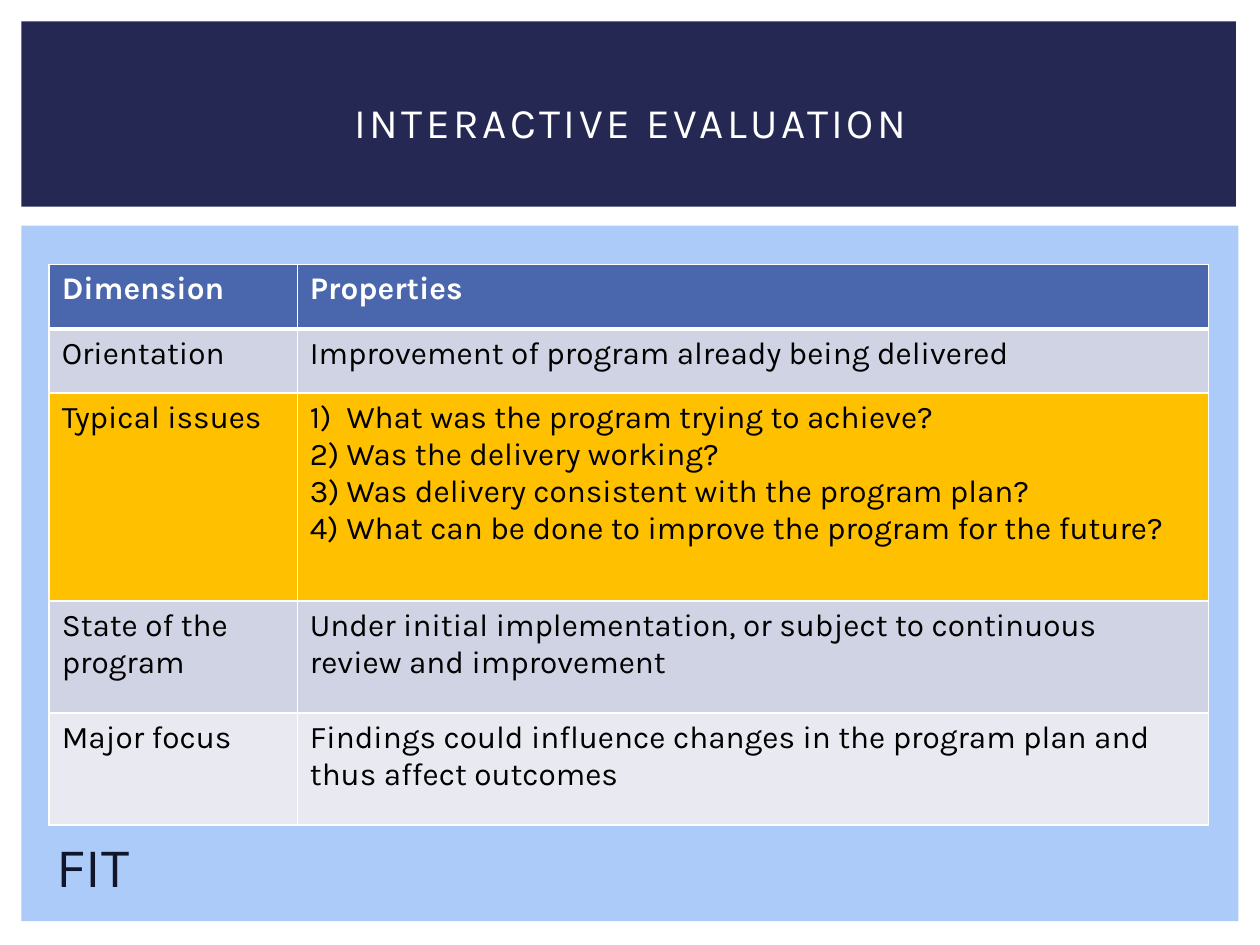
from lxml import etree
from pptx import Presentation
from pptx.dml.color import RGBColor
from pptx.enum import shapes, text
from pptx.oxml import ns
from pptx.util import Inches, Pt


def rgb(value):
    return RGBColor.from_string(value)


def write(frame, lines, color, size=18, bold=False):
    """Fill a text frame with one paragraph per line."""
    frame.word_wrap = True
    frame.text = "\n".join(lines)
    style = {"name": "Karla", "size": Pt(size), "bold": bold}
    for paragraph in frame.paragraphs:
        font = paragraph.runs[0].font
        for key, value in style.items():
            setattr(font, key, value)
        font.color.rgb = rgb(color)


deck = Presentation()
deck.slide_width, deck.slide_height = Inches(10), Inches(7.5)
slide = deck.slides.add_slide(deck.slide_layouts[6])

# Background panel and title band
for left, top, width, height, color in [
    (0.17, 1.79, 9.66, 5.52, "ACCBF9"),
    (0.17, 0.17, 9.64, 1.47, "242852"),
]:
    panel = slide.shapes.add_shape(
        shapes.MSO_SHAPE.RECTANGLE,
        Inches(left), Inches(top), Inches(width), Inches(height))
    panel.shadow.inherit = False
    panel.fill.solid()
    panel.fill.fore_color.rgb = rgb(color)
    panel.line.fill.background()

# Evaluation table: height, fill, dimension, properties
rows = [
    (0.51, "4A66AC", "Dimension", ["Properties"]),
    (0.51, "D0D3E3", "Orientation",
     ["Improvement of program already being delivered"]),
    (1.65, "FFC000", "Typical issues",
     ["1)\tWhat was the program trying to achieve?",
      "2)\tWas the delivery working?",
      "3)\tWas delivery consistent with the program plan?",
      "4)\tWhat can be done to improve the program for the future?"]),
    (0.89, "D0D3E3", "State of the program",
     ["Under initial implementation, or subject to continuous review and improvement"]),
    (0.89, "E9EAF1", "Major focus",
     ["Findings could influence changes in the program plan and thus affect outcomes"]),
]
evaluation = slide.shapes.add_table(
    len(rows), 2, Inches(0.39), Inches(2.1), Inches(9.2), Inches(4.45)).table
for column, width in zip(evaluation.columns, (1.97, 7.23)):
    column.width = Inches(width)

for r, (height, fill, dimension, properties) in enumerate(rows):
    evaluation.rows[r].height = Inches(height)
    for c, lines in enumerate(([dimension], properties)):
        cell = evaluation.cell(r, c)
        write(cell.text_frame, lines, "000000" if r else "FFFFFF", bold=r == 0)
        # White borders, heavier under the header; they precede the fill
        cell_format = cell._tc.get_or_add_tcPr()
        weights = {"lnL": 1, "lnR": 1, "lnT": 3 if r == 1 else 1,
                   "lnB": 1 if r else 3}
        for side, weight in weights.items():
            border = etree.SubElement(
                cell_format, ns.qn(f"a:{side}"), w=str(Pt(weight)))
            solid = etree.SubElement(border, ns.qn("a:solidFill"))
            etree.SubElement(solid, ns.qn("a:srgbClr"), val="FFFFFF")
        cell.fill.solid()
        cell.fill.fore_color.rgb = rgb(fill)

# Hanging indent for the numbered questions
for question in evaluation.cell(2, 1).text_frame.paragraphs:
    layout = question._p.get_or_add_pPr()
    layout.set("marL", str(Inches(0.29)))
    layout.set("indent", str(-Inches(0.29)))

# Title
title = slide.shapes.add_textbox(
    Inches(0.42), Inches(0.39), Inches(9.17), Inches(1.15)).text_frame
write(title, ["INTERACTIVE EVALUATION"], "FFFFFF", 24)
title.vertical_anchor = text.MSO_ANCHOR.MIDDLE
title.paragraphs[0].alignment = text.PP_ALIGN.CENTER
title.paragraphs[0].runs[0].font._element.set("spc", "200")

# Footer label
label = slide.shapes.add_textbox(
    Inches(0.35), Inches(6.55), Inches(1.81), Inches(0.64)).text_frame
write(label, ["FIT"], "121429", 32)
label.auto_size = text.MSO_AUTO_SIZE.SHAPE_TO_FIT_TEXT

deck.save("out.pptx")
